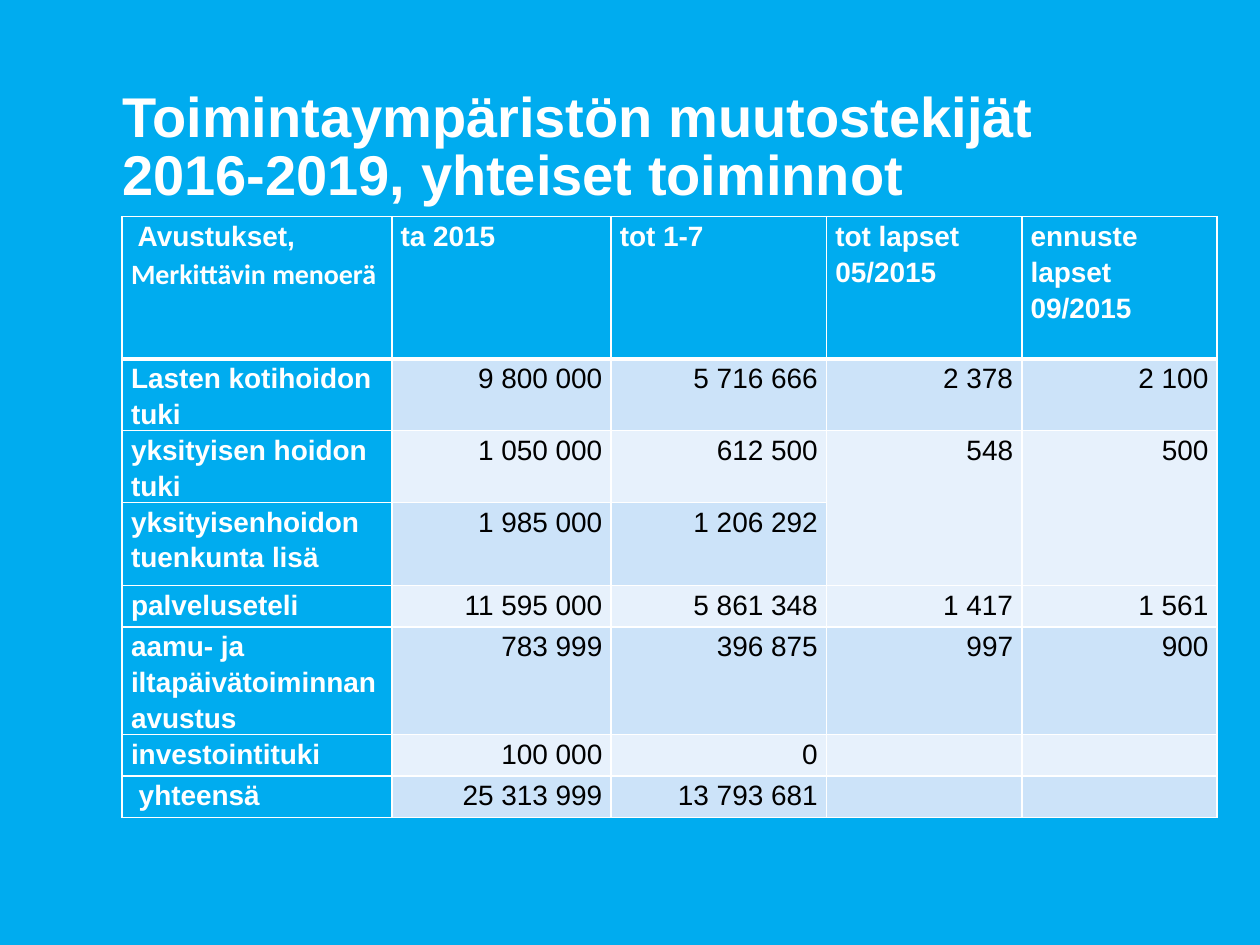
from dataclasses import dataclass

from lxml import etree
from pptx import Presentation
from pptx.dml.color import RGBColor
from pptx.enum.text import MSO_ANCHOR, MSO_AUTO_SIZE, PP_ALIGN
from pptx.oxml.ns import qn
from pptx.util import Inches, Pt

LEFT, RIGHT = PP_ALIGN.LEFT, PP_ALIGN.RIGHT
BOTTOM = MSO_ANCHOR.BOTTOM
NO_AUTOFIT = MSO_AUTO_SIZE.NONE

BLUE, WHITE, BLACK = "00ACEF", "FFFFFF", "000000"
BANDS = ("CCE3F9", "E7F1FC")
TITLE_ONLY = 5

COLUMN_WIDTHS = (2.14, 1.74, 1.71, 1.55, 1.55)
HEADER_HEIGHT = 1.13
HEADERS = (" Avustukset,\nMerkittävin menoerä", "ta 2015", "tot 1-7",
           "tot lapset 05/2015", "ennuste lapset 09/2015")


@dataclass
class GrantRow:
    name: str
    values: tuple[str, ...]
    height: float


@dataclass
class TextStyle:
    color: str
    size: float = 16
    bold: bool = False
    font: str = "Arial"
    alignment: PP_ALIGN = LEFT
    line_spacing: float = 1.15


GRANTS = (
    GrantRow("Lasten kotihoidon tuki",
             ("9 800 000", "5 716 666", "2 378", "2 100"), 0.56),
    GrantRow("yksityisen hoidon tuki",
             ("1 050 000", "612 500", "548", "500"), 0.56),
    GrantRow("yksityisenhoidon tuenkunta lisä",
             ("1 985 000", "1 206 292", "", ""), 0.66),
    GrantRow("palveluseteli",
             ("11 595 000", "5 861 348", "1 417", "1 561"), 0.33),
    GrantRow("aamu- ja iltapäivätoiminnan avustus",
             ("783 999", "396 875", "997", "900"), 0.84),
    GrantRow("investointituki", ("100 000", "0", "", ""), 0.33),
    GrantRow(" yhteensä", ("25 313 999", "13 793 681", "", ""), 0.33),
)
MERGED_ROWS, MERGED_COLUMNS = (2, 3), (3, 4)

HEADING_STYLE = TextStyle(WHITE, bold=True)
VALUE_STYLE = TextStyle(BLACK, alignment=RIGHT)
TITLE_STYLE = TextStyle(WHITE, size=32, bold=True, line_spacing=Pt(33))


def rgb(color: str) -> RGBColor:
    return RGBColor.from_string(color)


def set_attributes(target, values: dict) -> None:
    for name, value in values.items():
        setattr(target, name, value)


def format_paragraph(paragraph, style: TextStyle) -> None:
    set_attributes(paragraph, {"alignment": style.alignment,
                               "line_spacing": style.line_spacing})
    for run in paragraph.runs:
        set_attributes(run.font, {"name": style.font, "size": Pt(style.size),
                                  "bold": style.bold})
        run.font.color.rgb = rgb(style.color)


def add_border(cell, side: str, points: float) -> None:
    properties = cell._tc.get_or_add_tcPr()
    line = etree.SubElement(properties, qn(f"a:ln{side}"), w=str(Pt(points)))
    fill = etree.SubElement(line, qn("a:solidFill"))
    etree.SubElement(fill, qn("a:srgbClr"), val=WHITE)


def fill_cell(cell, text: str, style: TextStyle, fill: str, row: int) -> None:
    set_attributes(cell, {"margin_left": Inches(0.07), "margin_right": Inches(0.07),
                          "margin_top": 0, "margin_bottom": 0})
    # A heavier rule separates the header from the grants
    widths = {"L": 1, "R": 1, "T": 3 if row == 1 else 1, "B": 3 if row == 0 else 1}
    for side, points in widths.items():
        add_border(cell, side, points)
    cell.fill.solid()
    cell.fill.fore_color.rgb = rgb(fill)
    if text:
        cell.text = text
        for paragraph in cell.text_frame.paragraphs:
            format_paragraph(paragraph, style)


def add_title(slide, text: str) -> None:
    title = slide.shapes.title
    set_attributes(title, {"left": Inches(0.97), "top": Inches(0.55),
                           "width": Inches(8.11), "height": Inches(1.09)})
    frame = title.text_frame
    set_attributes(frame, {"text": text, "word_wrap": True, "auto_size": NO_AUTOFIT,
                           "vertical_anchor": BOTTOM, "margin_left": 0,
                           "margin_right": 0, "margin_top": 0, "margin_bottom": 0})
    format_paragraph(frame.paragraphs[0], TITLE_STYLE)


def add_grant_table(slide) -> None:
    heights = [HEADER_HEIGHT] + [grant.height for grant in GRANTS]
    table = slide.shapes.add_table(
        len(heights), len(COLUMN_WIDTHS), Inches(0.97), Inches(1.72),
        Inches(sum(COLUMN_WIDTHS)), Inches(sum(heights))).table
    set_attributes(table, {"first_row": False, "horz_banding": False})
    for column, width in zip(table.columns, COLUMN_WIDTHS):
        column.width = Inches(width)
    for row, height in zip(table.rows, heights):
        row.height = Inches(height)

    # Header row
    for column, text in enumerate(HEADERS):
        fill_cell(table.cell(0, column), text, HEADING_STYLE, BLUE, 0)
    second_line = table.cell(0, 0).text_frame.paragraphs[1]
    format_paragraph(second_line, TextStyle(WHITE, bold=True, font="Calibri"))

    # Grant rows in alternating bands
    for row, grant in enumerate(GRANTS, start=1):
        fill_cell(table.cell(row, 0), grant.name, HEADING_STYLE, BLUE, row)
        for column, text in enumerate(grant.values, start=1):
            fill_cell(table.cell(row, column), text, VALUE_STYLE,
                      BANDS[(row - 1) % 2], row)

    # Child counts shared by both private care grants
    first, last = MERGED_ROWS
    for column in MERGED_COLUMNS:
        table.cell(first, column).merge(table.cell(last, column))


def main() -> None:
    presentation = Presentation()
    set_attributes(presentation, {"slide_width": Inches(10),
                                  "slide_height": Inches(7.5)})
    slide = presentation.slides.add_slide(presentation.slide_layouts[TITLE_ONLY])
    background = slide.background.fill
    background.solid()
    background.fore_color.rgb = rgb(BLUE)
    add_title(slide, "Toimintaympäristön muutostekijät 2016-2019, yhteiset toiminnot")
    add_grant_table(slide)
    presentation.save("out.pptx")


if __name__ == "__main__":
    main()
